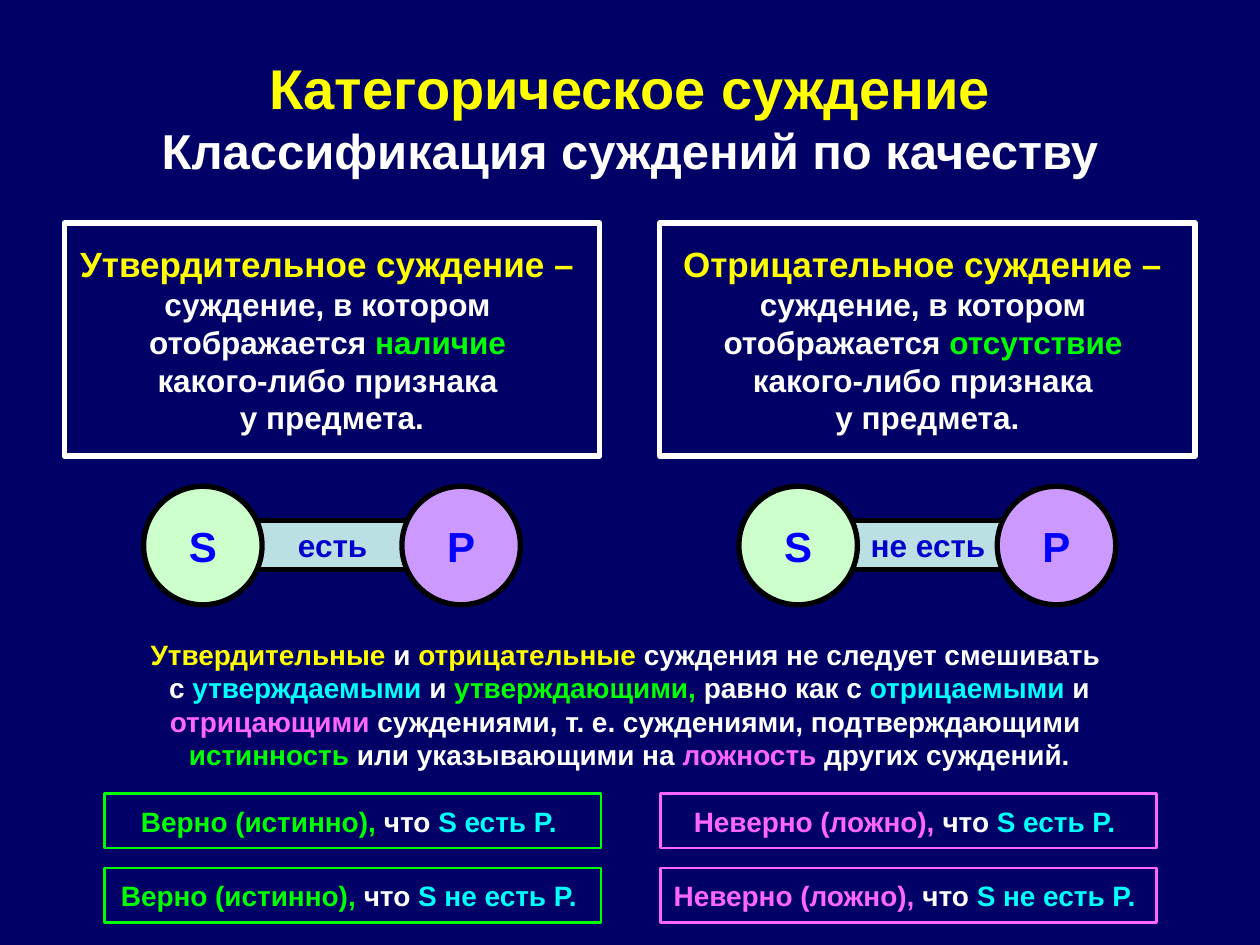
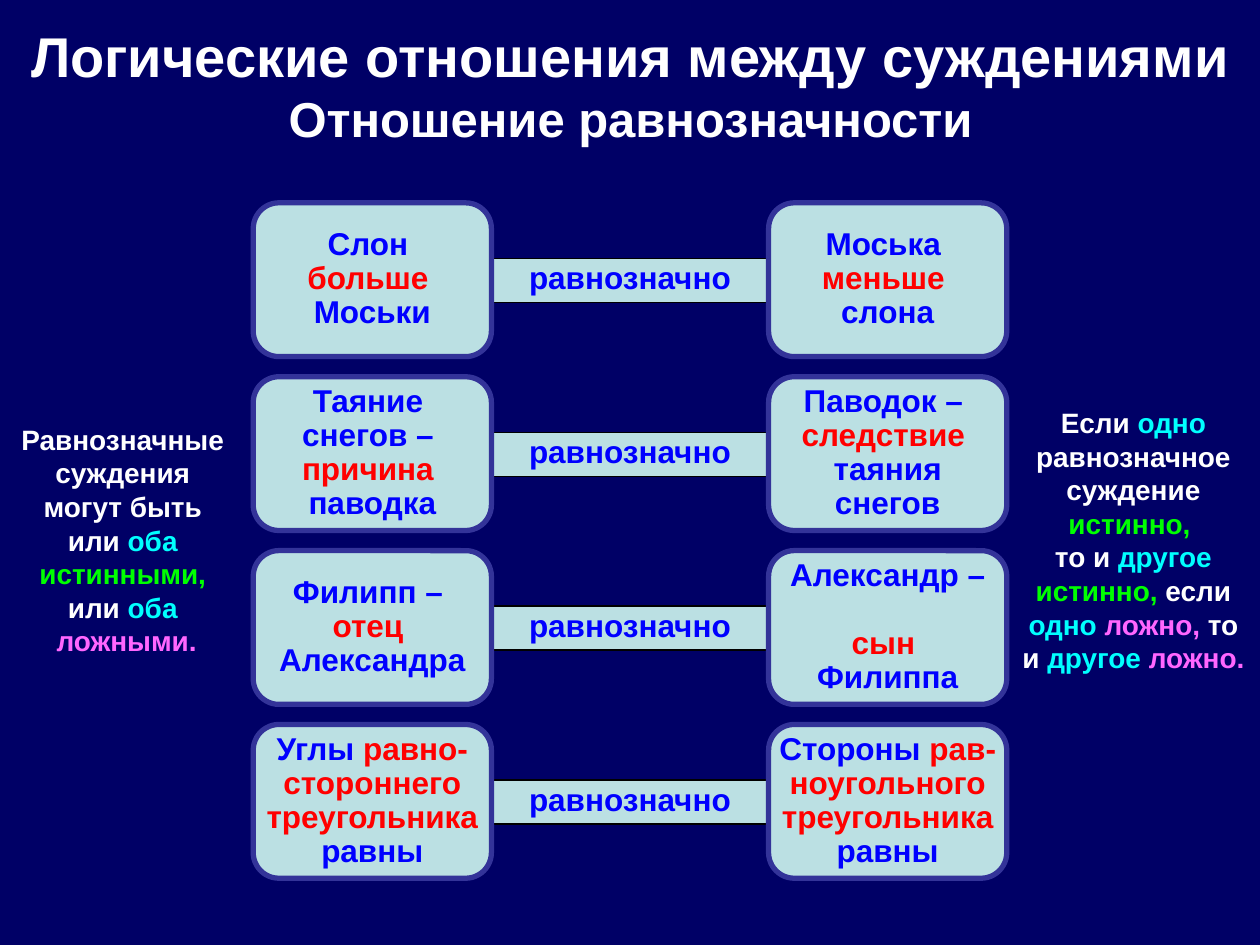
"""Build two slides on the quality of judgements and on their equivalence."""
from copy import deepcopy
from pptx import Presentation
from pptx.dml.color import RGBColor
from pptx.enum import shapes, text as txt
from pptx.oxml.ns import qn
from pptx.util import Pt

HUES = {
    "navy": "000066", "white": "FFFFFF", "black": "000000", "yellow": "FFFF00",
    "lime": "00FF00", "cyan": "00FFFF", "pink": "FF66FF", "red": "FF0000",
    "blue": "0000FF", "ink": "0000CC", "ice": "BBE0E3", "mint": "CCFFCC",
    "lilac": "CC99FF", "edge": "333399",
}
RGB = {name: RGBColor.from_string(code) for name, code in HUES.items()}
KIND = shapes.MSO_SHAPE
MID, TOP = txt.MSO_ANCHOR.MIDDLE, txt.MSO_ANCHOR.TOP

deck = Presentation()
deck.slide_width, deck.slide_height = Pt(720), Pt(540)
UNIT = deck.slide_width / 100
back = deck.slide_master.background.fill
back.solid()
back.fore_color.rgb = RGB["navy"]


def write(shape, marked, anchor=MID, wrap=True, gap=None):
    """Fill a shape with text whose {colour size} tags style what follows."""
    frame = shape.text_frame
    frame.word_wrap, frame.vertical_anchor = wrap, anchor
    frame.auto_size = txt.MSO_AUTO_SIZE.NONE
    para = frame.paragraphs[0]
    para.alignment = txt.PP_ALIGN.CENTER
    if gap:
        para.line_spacing = gap
    for part in marked.split("{")[1:]:
        tag, words = part.split("}")
        hue, *more = tag.split()
        size = int(more[0]) if more else size
        for row, line in enumerate(words.split("\n")):
            if row:
                para.add_line_break()
                para._p.findall(qn("a:br"))[-1].append(deepcopy(run._r.rPr))
            if line:
                run = para.add_run()
                run.text = line
                font = run.font
                font.name, font.size, font.bold = "Arial", Pt(size), True
                font.color.rgb = RGB[hue]


def box(slide, kind, at, marked, fill=None, line=None, width=3, **style):
    """Add a preset shape, or a text box if kind is None, in grid units."""
    place = [round(n * UNIT) for n in at]
    if kind is None:
        shape = slide.shapes.add_textbox(*place)
    else:
        shape = slide.shapes.add_shape(kind, *place)
        shape.shadow.inherit = False
        shape.line.color.rgb = RGB[line]
        shape.line.width = Pt(width)
        if fill:
            shape.fill.solid()
            shape.fill.fore_color.rgb = RGB[fill]
        else:
            shape.fill.background()
    write(shape, marked, **style)
    return shape


heads = [
    ((5, 3, 90, 12.5), MID, "{yellow 32}Категорическое суждение\n"
     "{white 28}Классификация суждений по качеству"),
    ((1.1, 1.2, 97.9, 10.2), TOP, "{white 32}Логические отношения между суждениями\n"
     "{white 28}Отношение равнозначности"),
]
pages = []
for at, anchor, head in heads:
    page = deck.slides.add_slide(deck.slide_layouts[5])
    title = page.shapes.title
    title.left, title.top, title.width, title.height = [round(n * UNIT) for n in at]
    write(title, head, anchor)
    pages.append(page)
kinds, equals = pages

STEP = 47.25
sorts = [("Утвердительное", "наличие", "есть"), ("Отрицательное", "отсутствие", "не есть")]
for col, (name, trait, verb) in enumerate(sorts):
    x = col * STEP
    box(kinds, KIND.RECTANGLE, (5.1 + x, 17.7, 42.5, 18.5),
        f"{{yellow 20}}{name} суждение – \n{{white 18}}суждение, в котором \nотображается "
        f"{{lime}}{trait} \n{{white}}какого-либо признака \nу предмета.", line="white")
    link = box(kinds, KIND.RECTANGLE, (20.5 + x, 41.3, 11.8, 3.9), "{ink 18}" + verb,
               "ice", "black", wrap=False)
    link.text_frame.margin_top = link.text_frame.margin_bottom = 0
    for left, sign, fill in [(11.4, "S", "mint"), (31.9, "P", "lilac")]:
        box(kinds, KIND.OVAL, (left + x, 38.6, 9.4, 9.4), "{blue 24}" + sign,
            fill, "black", wrap=False)

box(kinds, None, (10.6, 50, 78.7, 11.8),
    "{yellow 16}Утвердительные{white} и {yellow}отрицательные"
    "{white} суждения не следует смешивать \nс {cyan}утверждаемыми{white} и "
    "{lime}утверждающими, {white}равно как с {cyan}отрицаемыми {white}и "
    "{pink}отрицающими {white}суждениями, т. е. суждениями, подтверждающими \n"
    "{lime}истинность{white} или указывающими на {pink}ложность{white} других суждений.")

for col, (claim, hue) in enumerate([("Верно (истинно)", "lime"), ("Неверно (ложно)", "pink")]):
    for row, verb in enumerate(["есть", "не есть"]):
        box(kinds, KIND.RECTANGLE, (8.3 + col * 44.1, 63 + row * 5.9, 39.4, 4.3),
            f"{{{hue} 16}}{claim}, {{white}}что {{cyan}}S {verb} P. ",
            line=hue, width=1.5, wrap=False)

pairs = [
    ("{blue 18}Слон \n{red}больше \n{blue}Моськи",
     "{blue 18}Моська \n{red}меньше \n{blue}слона"),
    ("{blue 18}Таяние \nснегов – \n{red}причина \n{blue}паводка",
     "{blue 18}Паводок – \n{red}следствие \n{blue}таяния снегов"),
    ("{blue 18}Филипп – \n{red}отец \n{blue}Александра",
     "{blue 18}Александр – \n{red}сын \n{blue}Филиппа"),
    ("{blue 18}Углы {red}равно-стороннего треугольника {blue}равны",
     "{blue 18}Стороны {red}рав-ноугольного треугольника {blue}равны"),
]
for row, pair in enumerate(pairs):
    y = 16.1 + row * 13.8
    link = box(equals, KIND.RECTANGLE, (36.2, y + 4.4, 27.6, 3.5), "{blue 18}равнозначно",
               "ice", "black", 0.75, wrap=False)
    link.text_frame.margin_top = 0
    for col, claim in enumerate(pair):
        card = box(equals, KIND.ROUNDED_RECTANGLE, (20.1 + col * 40.9, y, 18.9, 12.2),
                   claim, "ice", "edge", gap=0.9)
        if row == len(pairs) - 1:
            card.text_frame.margin_left = card.text_frame.margin_right = 0

notes = [
    "{white 16}Равнозначные \nсуждения \nмогут быть \nили {cyan}оба \n"
    "{lime}истинными, \n{white}или {cyan}оба \n{pink}ложными.",
    "{white 16}Если {cyan}одно{white} равнозначное суждение {lime}истинно, \n"
    "{white}то и {cyan}другое {lime}истинно,{white} если {cyan}одно {pink}ложно,"
    "{white} то и {cyan}другое {pink}ложно.",
]
for col, note in enumerate(notes):
    box(equals, None, (col * 79.9, 16.1, 20.1, 53.5), note)

deck.save("out.pptx")
